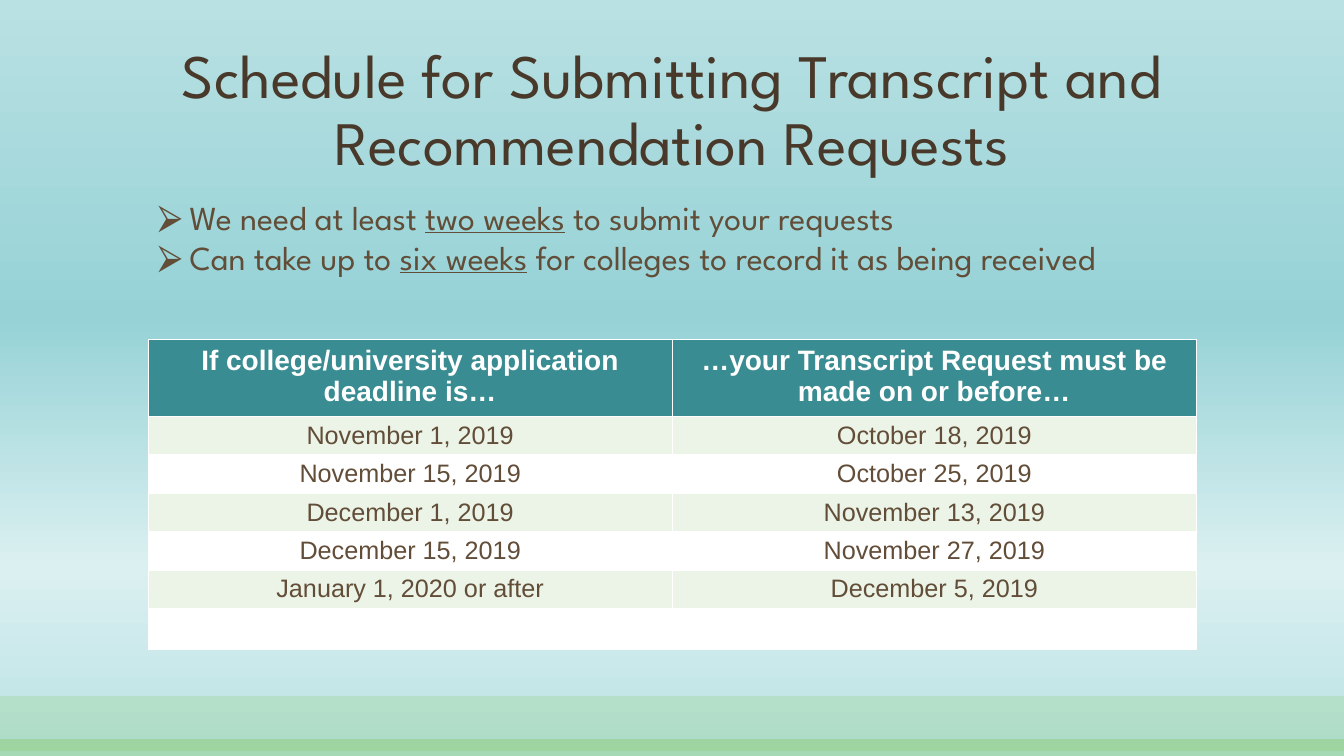
from copy import deepcopy

from lxml import etree
from pptx import Presentation
from pptx.dml.color import RGBColor
from pptx.enum.shapes import MSO_SHAPE
from pptx.enum.text import MSO_ANCHOR, MSO_AUTO_SIZE, PP_ALIGN
from pptx.oxml.ns import qn
from pptx.util import Pt

RECTANGLE = MSO_SHAPE.RECTANGLE
TOP, BOTTOM = MSO_ANCHOR.TOP, MSO_ANCHOR.BOTTOM
NO_AUTOFIT = MSO_AUTO_SIZE.NONE
LEFT, CENTER = PP_ALIGN.LEFT, PP_ALIGN.CENTER

SLIDE_WIDTH, SLIDE_HEIGHT = 960, 540
DISPLAY_FONT, TABLE_FONT = "League Spartan", "Arial"
TITLE_BROWN, TEXT_BROWN = "49392A", "624D38"
WHITE, TEAL, PALE_GREEN, GRASS = "FFFFFF", "398C91", "EBF4E7", "72C23C"
SKY_STOPS = [(0, "B9E1E3"), (0.42, "96D2D6"), (0.75, "DBF0F1"), (1, "B9E1E3")]

TITLE = "Schedule for Submitting Transcript and Recommendation Requests"
BULLETS = [
    ("We need at least ", "two weeks", " to submit your requests"),
    ("Can take up to ", "six weeks", " for colleges to record it as being received"),
]
DEADLINES = [
    ("If college/university application deadline is…",
     "…your Transcript Request must be made on or before…"),
    ("November 1, 2019", "October 18, 2019"),
    ("November 15, 2019", "October 25, 2019"),
    ("December 1, 2019", "November 13, 2019"),
    ("December 15, 2019", "November 27, 2019"),
    ("January 1, 2020 or after", "December 5, 2019"),
    ("", ""),
]


def color(value):
    return RGBColor.from_string(value)


def add_text(paragraph, text, font, size, fill, bold=False, underline=False):
    run = paragraph.add_run()
    run.text = text
    run.font.name = font
    run.font.size = Pt(size)
    run.font.color.rgb = color(fill)
    run.font.bold = bold
    run.font.underline = underline


def place(shape, box, anchor):
    shape.left, shape.top, shape.width, shape.height = map(Pt, box)
    frame = shape.text_frame
    frame.word_wrap = True
    frame.auto_size = NO_AUTOFIT
    frame.vertical_anchor = anchor
    return frame


def paint_sky(slide):
    fill = slide.background.fill
    fill.gradient()
    fill.gradient_angle = 270
    stop_list = slide.element.find(".//" + qn("a:gsLst"))
    for _ in range(len(SKY_STOPS) - len(stop_list)):
        stop_list.append(deepcopy(stop_list[0]))
    for stop, (position, value) in zip(fill.gradient_stops, SKY_STOPS):
        stop.position = position
        stop.color.rgb = color(value)


def add_grass_band(slide, box, opacity):
    band = slide.shapes.add_shape(RECTANGLE, *map(Pt, box))
    band.shadow.inherit = False
    band.line.fill.background()
    band.fill.solid()
    band.fill.fore_color.rgb = color(GRASS)
    fill_color = band.fill._xPr.find(".//" + qn("a:srgbClr"))
    etree.SubElement(fill_color, qn("a:alpha"), val=str(opacity * 1000))


def fill_title(shape, box):
    paragraph = place(shape, box, BOTTOM).paragraphs[0]
    paragraph.alignment = CENTER
    paragraph.line_spacing = 0.9
    add_text(paragraph, TITLE, DISPLAY_FONT, 44.1, TITLE_BROWN)


def set_bullet(paragraph, indent):
    properties = paragraph._p.get_or_add_pPr()
    properties.set("marL", str(Pt(indent)))
    properties.set("indent", str(Pt(-indent)))
    bullet_color = etree.SubElement(properties, qn("a:buClr"))
    etree.SubElement(bullet_color, qn("a:srgbClr"), val=TEXT_BROWN)
    etree.SubElement(properties, qn("a:buFont"), typeface=TABLE_FONT)
    etree.SubElement(properties, qn("a:buChar"), char="⮚")


def fill_bullets(shape, box):
    frame = place(shape, box, TOP)
    for index, parts in enumerate(BULLETS):
        paragraph = frame.add_paragraph() if index else frame.paragraphs[0]
        paragraph.alignment = LEFT
        paragraph.line_spacing = 1.0
        paragraph.space_before = Pt(0)
        set_bullet(paragraph, 22.5)
        for position, text in enumerate(parts):
            add_text(paragraph, text, DISPLAY_FONT, 24, TEXT_BROWN,
                     underline=position == 1)


def add_deadline_table(slide, box, header_height):
    rows, columns = len(DEADLINES), len(DEADLINES[0])
    table = slide.shapes.add_table(rows, columns, *map(Pt, box)).table
    row_height = (box[3] - header_height) / (rows - 1)
    for column in table.columns:
        column.width = Pt(box[2] / columns)
    for row_index, texts in enumerate(DEADLINES):
        header = row_index == 0
        table.rows[row_index].height = Pt(header_height if header else row_height)
        band = TEAL if header else PALE_GREEN if row_index % 2 else WHITE
        for column_index, text in enumerate(texts):
            cell = table.cell(row_index, column_index)
            cell.fill.solid()
            cell.fill.fore_color.rgb = color(band)
            paragraph = cell.text_frame.paragraphs[0]
            paragraph.alignment = CENTER
            if text:
                add_text(paragraph, text, TABLE_FONT, 20 if header else 18,
                         WHITE if header else TEXT_BROWN, bold=header)


def build_schedule_slide(presentation):
    slide = presentation.slides.add_slide(presentation.slide_layouts[1])
    left, width = 105.8, 748.8
    paint_sky(slide)
    add_grass_band(slide, (0, 497, SLIDE_WIDTH, 39.6), 17)
    add_grass_band(slide, (0, 528, SLIDE_WIDTH, 12), 27)
    fill_title(slide.shapes.title, (left, 45.4, width, 85.7))
    fill_bullets(slide.placeholders[1], (left, 136.8, width, 94.3))
    add_deadline_table(slide, (left, 242.8, width, 219.2), 54.8)


def main():
    presentation = Presentation()
    presentation.slide_width = Pt(SLIDE_WIDTH)
    presentation.slide_height = Pt(SLIDE_HEIGHT)
    build_schedule_slide(presentation)
    presentation.save("out.pptx")


if __name__ == "__main__":
    main()
